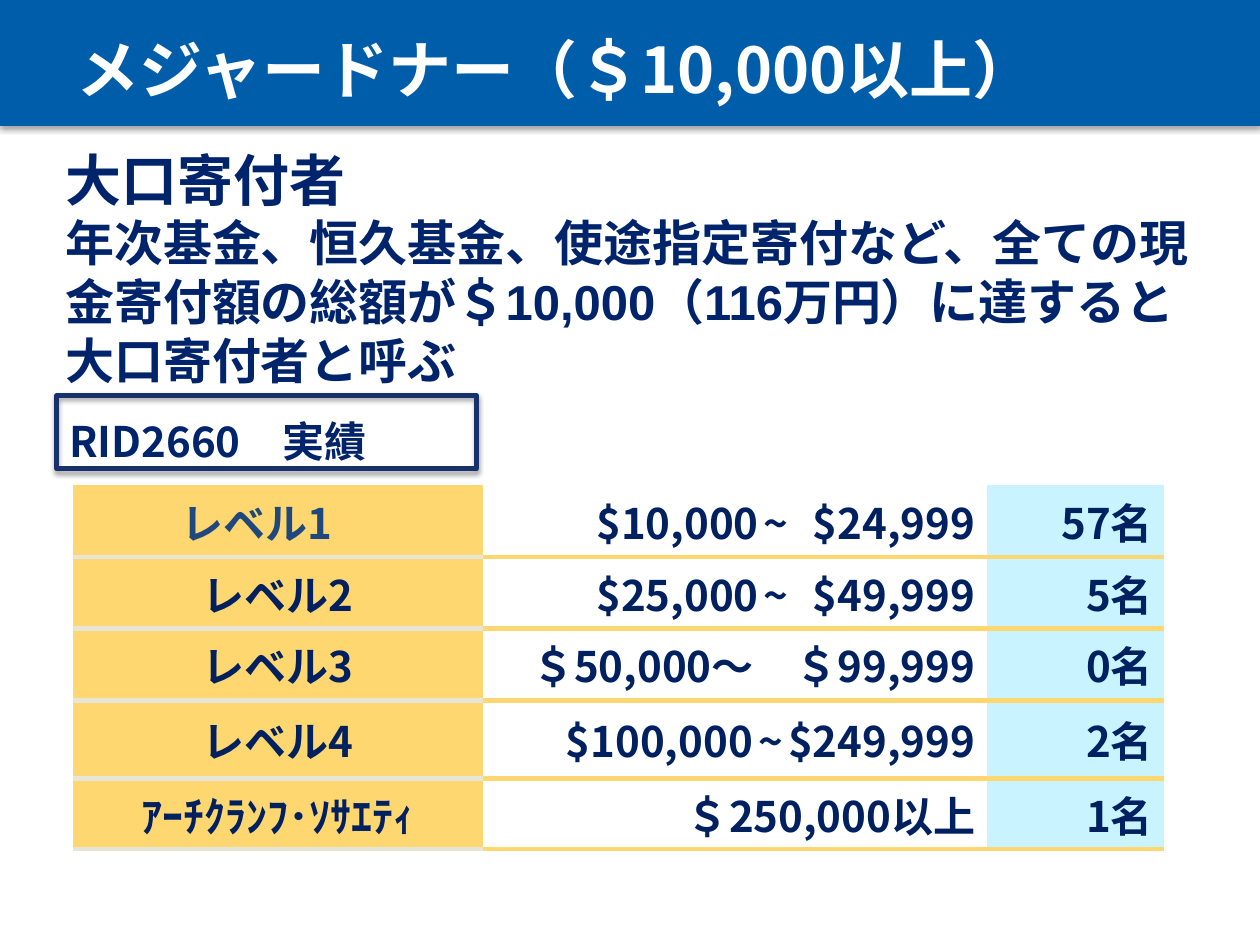
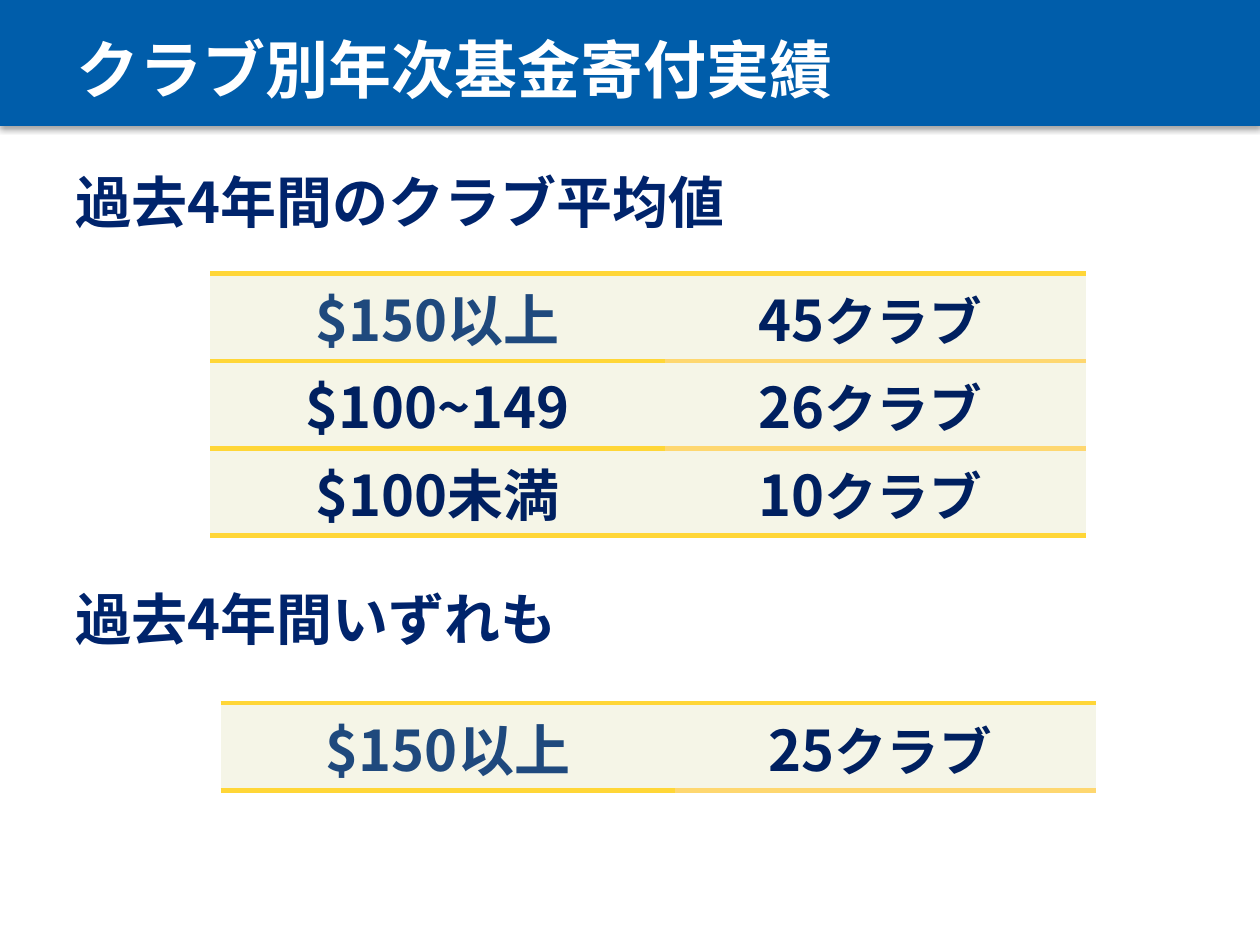
from lxml.etree import SubElement
from pptx import Presentation
from pptx.dml.color import RGBColor
from pptx.enum.shapes import MSO_SHAPE as Shape
from pptx.enum.text import MSO_ANCHOR as Anchor, PP_ALIGN as Align
from pptx.oxml import parse_xml
from pptx.oxml.ns import nsdecls, qn
from pptx.util import Inches, Pt

BLUE = RGBColor(0x00, 0x5D, 0xAA)
NAVY = RGBColor(0x00, 0x24, 0x6C)
INK = RGBColor(0x00, 0x20, 0x60)
STEEL = RGBColor(0x1F, 0x49, 0x7D)
FRAME = RGBColor(0x16, 0x31, 0x6B)
WHITE = RGBColor(0xFF, 0xFF, 0xFF)
AMBER = RGBColor(0xFE, 0xD7, 0x70)
GOLD = RGBColor(0xFF, 0xD6, 0x37)
STONE = RGBColor(0xE6, 0xE5, 0xD8)
SKY = RGBColor(0xC8, 0xF3, 0xFF)
CREAM = RGBColor(0xF5, 0xF5, 0xE7)

GOTHIC = "Noto Sans CJK JP"
COLUMNS, ROWS = 100, 75


class Deck:
    """Holds the style and the current page; lengths are grid columns and rows."""

    def __init__(self):
        self.file = Presentation()
        self.file.slide_width, self.file.slide_height = Inches(10), Inches(7.5)
        self.column = self.file.slide_width / COLUMNS
        self.row = self.file.slide_height / ROWS
        self.page = None

    def place(self, left, top, width, height):
        return (round(left * self.column), round(top * self.row),
                round(width * self.column), round(height * self.row))

    def new_page(self, title):
        self.page = self.file.slides.add_slide(self.file.slide_layouts[6])
        self.panel((0, 0, COLUMNS, 10), fill=BLUE)
        self.text((5.1, 2.4, 90, 5.3), [dict(runs=[title], size=36, color=WHITE)])

    def panel(self, area, fill=None, line=None):
        """Draw a rectangle with a soft shadow below it."""
        panel = self.page.shapes.add_shape(Shape.RECTANGLE, *self.place(*area))
        if fill is None:
            panel.fill.background()
        else:
            panel.fill.solid()
            panel.fill.fore_color.rgb = fill
        if line is None:
            panel.line.fill.background()
        else:
            panel.line.color.rgb = line
            panel.line.width = Pt(3)
        panel.shadow.inherit = False
        effects = panel.element.spPr.find(qn("a:effectLst"))
        effects.append(parse_xml(
            f'<a:outerShdw {nsdecls("a")} blurRad="{Pt(3.1)}" dist="{Pt(1.8)}" dir="5400000" '
            'algn="t" rotWithShape="0"><a:srgbClr val="000000"><a:alpha val="35000"/>'
            '</a:srgbClr></a:outerShdw>'))

    def text(self, area, paras, anchor=Anchor.TOP):
        frame = self.page.shapes.add_textbox(*self.place(*area)).text_frame
        settings = dict(word_wrap=True, vertical_anchor=anchor, margin_top=0, margin_bottom=0)
        for name, value in settings.items():
            setattr(frame, name, value)
        for index, para in enumerate(paras):
            target = frame.add_paragraph() if index else frame.paragraphs[0]
            self.fill_para(target, **para)

    def fill_para(self, para, runs, size, color, face=GOTHIC, align=Align.LEFT, spacing=None):
        """Fill a paragraph; a run is a string or (string, format) with size or tracking."""
        para.alignment = align
        if spacing:
            para.line_spacing = Pt(spacing)
        for run in runs:
            words, change = (run, {}) if isinstance(run, str) else run
            span = para.add_run()
            span.text = words
            look = dict(size=Pt(change.get("size", size)), bold=True, name=face)
            for name, value in look.items():
                setattr(span.font, name, value)
            span.font.color.rgb = color
            properties = span.font._element
            SubElement(properties, qn("a:ea")).set("typeface", face)
            if "tracking" in change:
                properties.set("spc", str(round(change["tracking"] * 100)))

    def table(self, corner, widths, heights, cells, columns, rules, size):
        """columns: a (fill, align, left inset, right inset) each; rules: colours by boundary."""
        area = self.place(*corner, sum(widths), sum(heights))
        table = self.page.shapes.add_table(len(heights), len(widths), *area).table
        table.first_row = table.horz_banding = False
        for column, width in zip(table.columns, widths):
            column.width = round(width * self.column)
        for row, height in zip(table.rows, heights):
            row.height = round(height * self.row)
        for y, line in enumerate(cells):
            for x, (runs, (fill, align, left, right)) in enumerate(zip(line, columns)):
                cell = table.cell(y, x)
                settings = dict(vertical_anchor=Anchor.MIDDLE, margin_top=0, margin_bottom=0,
                                margin_left=Inches(left), margin_right=Inches(right))
                for name, value in settings.items():
                    setattr(cell, name, value)
                if fill is None:
                    cell.fill.background()
                else:
                    cell.fill.solid()
                    cell.fill.fore_color.rgb = fill
                self.fill_para(cell.text_frame.paragraphs[0], runs, size,
                               INK if x or y else STEEL, align=align)
                self.borders(cell, rules[y][x], rules[y + 1][x])

    def borders(self, cell, top, bottom):
        sides = dict(lnL=None, lnR=None, lnT=top, lnB=bottom)
        for index, (side, color) in enumerate(sides.items()):
            paint = (f'<a:solidFill><a:srgbClr val="{color}"/></a:solidFill>'
                     if color is not None else "<a:noFill/>")
            border = parse_xml(f'<a:{side} {nsdecls("a")} w="{Pt(3)}">{paint}</a:{side}>')
            cell._tc.get_or_add_tcPr().insert(index, border)


def amounts(low, high, gap=True):
    """Runs of a dollar range, loosened around the tilde."""
    space = [(" ", dict(tracking=5.4))] if gap else []
    return [low[:-1], (low[-1] + "~", dict(tracking=3)), *space, high]


def donor_page(deck):
    deck.new_page("メジャードナー（＄10,000以上）")
    body = dict(color=NAVY, face="Arial")
    deck.text((4.2, 8.3, 93.3, 24.2), [
        dict(runs=["大口寄付者"], size=32, spacing=61.5, **body),
        dict(runs=["年次基金、恒久基金、使途指定寄付など、全ての現金寄付額の総額が"
                   "＄10,000（116万円）に達すると大口寄付者と呼ぶ"],
             size=28, spacing=33.7, **body)])
    levels = [
        ("レベル1　", amounts("$10,000", "$24,999"), 57),
        ("レベル2", amounts("$25,000", "$49,999"), 5),
        ("レベル3", ["＄50,000～　＄99,999"], 0),
        ("レベル4", amounts("$100,000", "$249,999", gap=False), 2),
        ("ｱｰﾁｸﾗﾝﾌ･ｿｻｴﾃｨ", ["＄250,000以上"], 1)]
    deck.table((5.8, 38.5), (32.5, 40, 14.1), (5.7, 5.7, 5.7, 6.2, 5.6),
               [([level], amount, [f"{count}名"]) for level, amount, count in levels],
               [(AMBER, Align.CENTER, 0, 0), (None, Align.RIGHT, 0, 0.09),
                (SKY, Align.RIGHT, 0.09, 0.09)],
               [(None, None, None)] + [(STONE, AMBER, AMBER)] * len(levels), size=24)
    deck.text((4.5, 31.4, 72.5, 6.9),
              [dict(runs=["RID2660　実績"], size=24, color=NAVY, spacing=31)], Anchor.MIDDLE)
    deck.panel((4.5, 31.4, 33.3, 5.8), line=FRAME)


def club_page(deck):
    deck.new_page("クラブ別年次基金寄付実績")
    outer, inner = (GOLD, GOLD), (GOLD, AMBER)
    sections = [
        ("過去4年間のクラブ平均値", 13.3, (16.7, 21.7),
         [("$150以上", 45), ("$100~149", 26), ("$100未満", 10)],
         [outer, inner, inner, outer]),
        ("過去4年間いずれも", 46.4, (17.5, 55.8), [("$150以上", 25)], [outer, inner])]
    for heading, top, corner, bands, rules in sections:
        deck.text((5, top, 79.6, 6.9), [dict(runs=[heading], size=32, color=NAVY)])
        deck.table(corner, (36.1, 33.4), [6.94] * len(bands),
                   [([band], [str(clubs), ("クラブ", dict(size=30))]) for band, clubs in bands],
                   [(CREAM, Align.CENTER, 0, 0), (CREAM, Align.CENTER, 0, 0.09)],
                   rules, size=32)


def main():
    deck = Deck()
    donor_page(deck)
    club_page(deck)
    deck.file.save("out.pptx")


if __name__ == "__main__":
    main()
